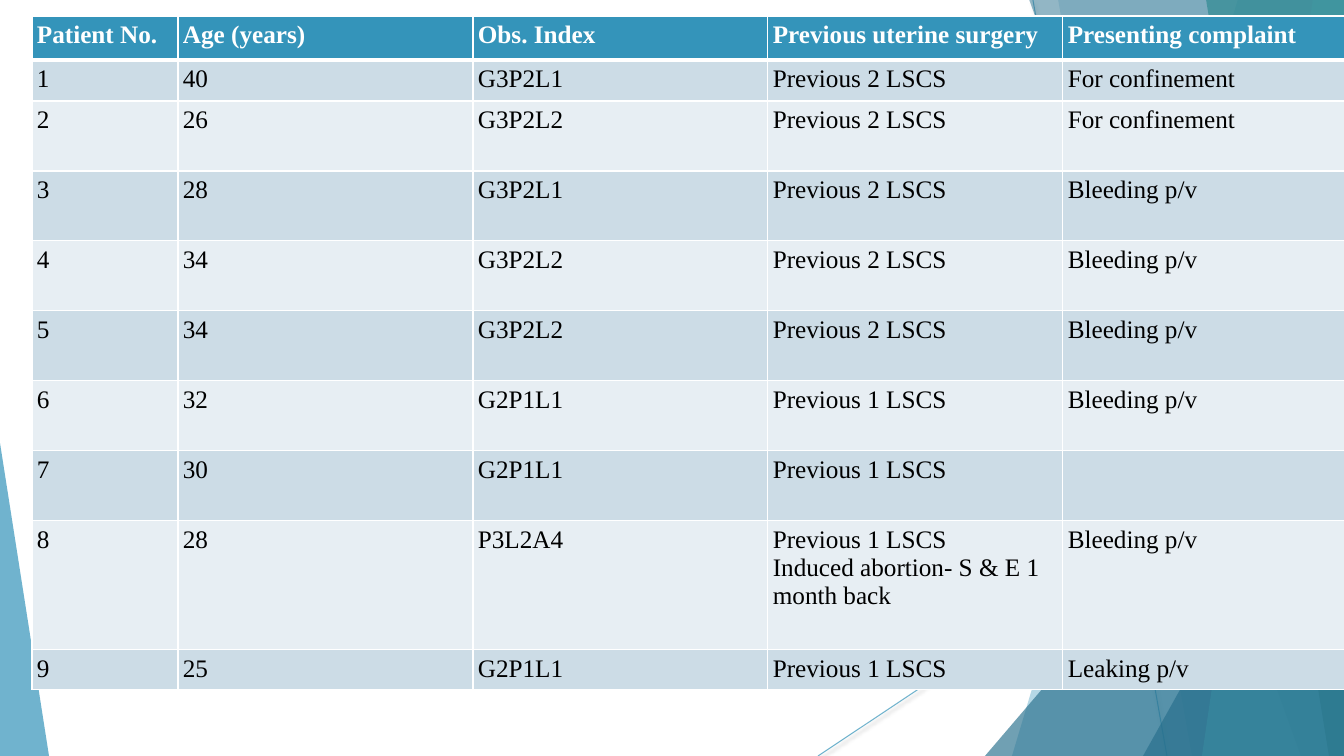
"""Build a slide with a patient table over a faceted blue backdrop."""
import pptx
import pptx.dml.color
import pptx.oxml
import pptx.oxml.ns
import pptx.util

HEAD = ["Patient No.", "Age (years)", "Obs. Index",
        "Previous uterine surgery", "Presenting complaint"]
CASES = [
    ("1", "40", "G3P2L1", "Previous 2 LSCS", "For confinement"),
    ("2", "26", "G3P2L2", "Previous 2 LSCS", "For confinement"),
    ("3", "28", "G3P2L1", "Previous 2 LSCS", "Bleeding p/v"),
    ("4", "34", "G3P2L2", "Previous 2 LSCS", "Bleeding p/v"),
    ("5", "34", "G3P2L2", "Previous 2 LSCS", "Bleeding p/v"),
    ("6", "32", "G2P1L1", "Previous 1 LSCS", "Bleeding p/v"),
    ("7", "30", "G2P1L1", "Previous 1 LSCS", ""),
    ("8", "28", "P3L2A4",
     "Previous 1 LSCS\nInduced abortion- S & E 1 month back", "Bleeding p/v"),
    ("9", "25", "G2P1L1", "Previous 1 LSCS", "Leaking p/v"),
]
THEME = {
    "font": "Times New Roman", "size": 18, "pad": 5,
    "blue": "3494BA", "deep": "276F8C", "aqua": "58B6C0", "teal": "3A8F98",
    "bands": ("CCDCE6", "E7EEF3"), "white": "FFFFFF", "black": "000000",
}
WIDE, HIGH = 1344, 756
LEFT, TOP = 32, 16
COLS = [146] + [295] * 4
ROWS = [44, 41] + [70] * 6 + [129, 40]
RAYS = [((1033, 0), (1167, HIGH)), ((WIDE, 406), (818, HIGH))]
FACETS = [
    ("blue", 36, [(1238, -1), (WIDE, -1), (WIDE, HIGH), (1012, HIGH)]),
    ("blue", 20, [(1058, -1), (WIDE, -1), (WIDE, HIGH), (1192, HIGH)]),
    ("deep", 66, [(985, HIGH), (WIDE, 336), (WIDE, HIGH)]),
    ("deep", 50, [(1029, -1), (WIDE, -1), (WIDE, HIGH), (1301, HIGH)]),
    ("aqua", 70, [(1313, -1), (WIDE, -1), (WIDE, HIGH), (1202, HIGH)]),
    ("teal", 80, [(1206, -1), (WIDE, -1), (WIDE, HIGH), (1329, HIGH)]),
    ("deep", 66, [(1143, HIGH), (WIDE, 396), (WIDE, HIGH)]),
    ("blue", 70, [(0, HIGH), (0, 443), (49, HIGH)]),
]
SCALE = 914400 / 100.8
SPACE = pptx.oxml.ns.nsdecls("a")


def px(num):
    """Turn pixels into EMU."""
    return pptx.util.Emu(round(num * SCALE))


def rgb(code):
    """Turn a hex code into a colour."""
    return pptx.dml.color.RGBColor.from_string(code)


def fade(shape, alpha):
    """Make the colours of a shape see-through."""
    for tint in shape._element.spPr.iter(pptx.oxml.ns.qn("a:srgbClr")):
        tint.append(pptx.oxml.parse_xml(
            f'<a:alpha {SPACE} val="{alpha * 1000}"/>'))


def write(frame, text, color, bold=False):
    """Put formatted text in the first paragraph of a frame."""
    para = frame.paragraphs[0]
    para.text = text
    for run in para.runs:
        font = run.font
        font.name, font.size = THEME["font"], pptx.util.Pt(THEME["size"])
        font.bold, font.color.rgb = bold, rgb(color)


def edge(cell, **sides):
    """Draw the borders of a cell with widths in points."""
    props = cell._tc.get_or_add_tcPr()
    for side in "LRTB":
        width = pptx.util.Pt(sides.get(side, 1))
        props.append(pptx.oxml.parse_xml(
            f'<a:ln{side} {SPACE} w="{width}"><a:solidFill>'
            f'<a:srgbClr val="{THEME["white"]}"/></a:solidFill></a:ln{side}>'))


def draw_rays(shapes):
    """Draw the thin lines with their soft shadow."""
    for start, end in RAYS:
        ray = shapes.add_connector(1, *map(px, start + end))
        ray.line.color.rgb = rgb(THEME["blue"])
        ray.line.width = pptx.util.Pt(0.75)
        fade(ray, 70)
        ray._element.spPr.append(pptx.oxml.parse_xml(
            f'<a:effectLst {SPACE}><a:outerShdw blurRad="38100" dist="20000" '
            f'dir="5400000" rotWithShape="0"><a:srgbClr val="{THEME["black"]}">'
            '<a:alpha val="38000"/></a:srgbClr></a:outerShdw></a:effectLst>'))


def draw_facets(shapes):
    """Draw the see-through polygons."""
    for tint, alpha, points in FACETS:
        pen = shapes.build_freeform(*points[0], scale=SCALE)
        pen.add_line_segments(points[1:], close=True)
        facet = pen.convert_to_shape()
        facet.shadow.inherit = False
        facet.fill.solid()
        facet.fill.fore_color.rgb = rgb(THEME[tint])
        facet.line.fill.background()
        fade(facet, alpha)


def draw_table(shapes):
    """Draw the table of cases."""
    table = shapes.add_table(len(ROWS), len(COLS), px(LEFT), px(TOP),
                             px(sum(COLS)), px(sum(ROWS))).table
    table.horz_banding = False
    for col, width in zip(table.columns, COLS):
        col.width = px(width)
    for row, high in zip(table.rows, ROWS):
        row.height = px(high)
    pad = px(THEME["pad"])
    for r, texts in enumerate([HEAD] + CASES):
        top = r == 0
        fill = THEME["blue"] if top else THEME["bands"][(r - 1) % 2]
        for c, text in enumerate(texts):
            cell = table.cell(r, c)
            cell.margin_left = cell.margin_right = pad
            cell.margin_top = cell.margin_bottom = pad
            edge(cell, T=3 if r == 1 else 1, B=3 if top else 1)
            cell.fill.solid()
            cell.fill.fore_color.rgb = rgb(fill)
            write(cell.text_frame, text, bold=top,
                  color=THEME["white"] if top else THEME["black"])


def main():
    """Build and save the slide."""
    deck = pptx.Presentation()
    deck.slide_width, deck.slide_height = px(WIDE), px(HIGH)
    shapes = deck.slides.add_slide(deck.slide_layouts[6]).shapes
    draw_rays(shapes)
    draw_facets(shapes)
    draw_table(shapes)
    deck.save("out.pptx")


if __name__ == "__main__":
    main()
